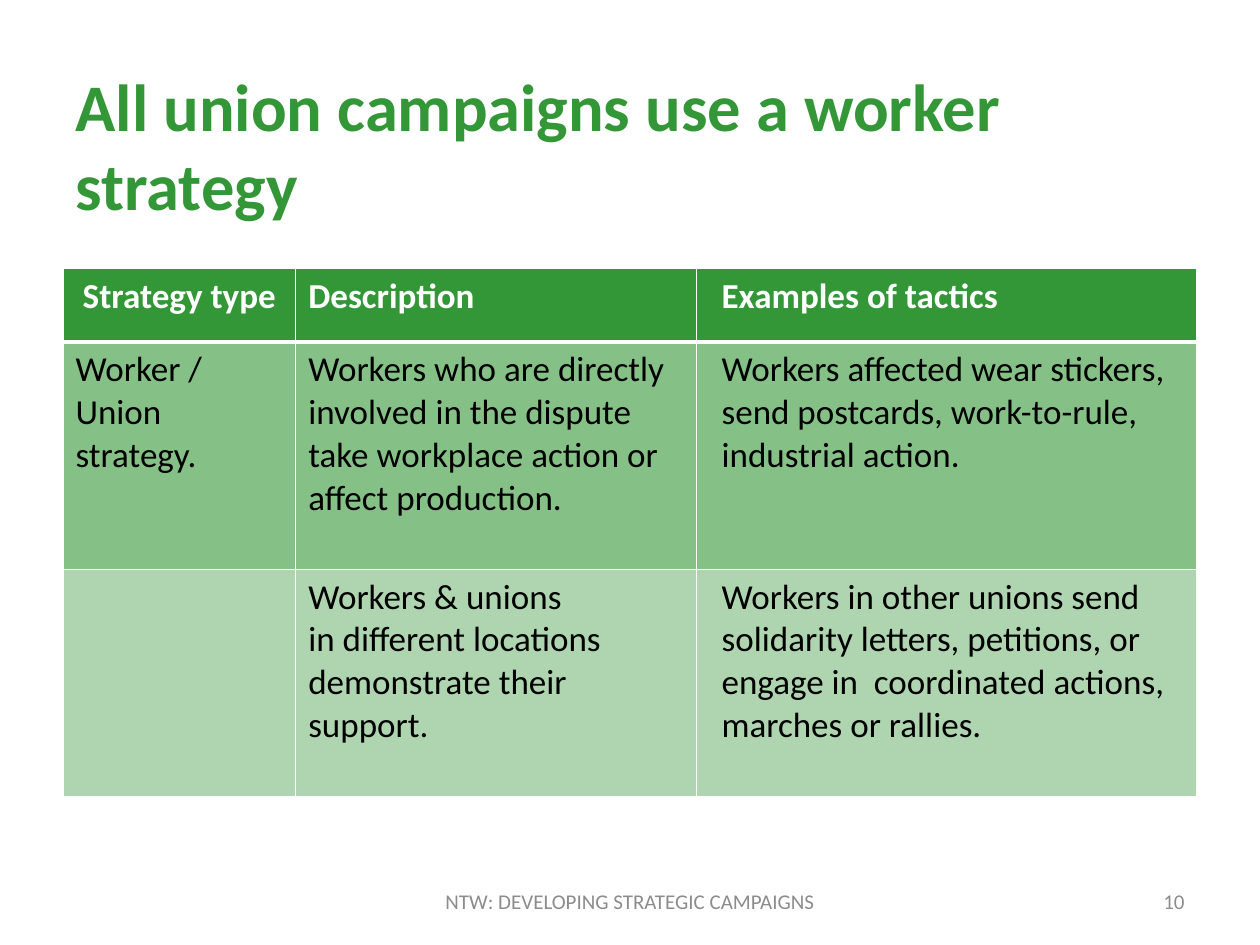
from lxml.etree import SubElement
from pptx import Presentation
from pptx.dml.color import RGBColor
from pptx.enum.text import MSO_ANCHOR as Anchor, MSO_AUTO_SIZE as AutoSize, PP_ALIGN as Align
from pptx.oxml.ns import qn
from pptx.util import Pt

GREEN, MID_GREEN, PALE_GREEN = "349737", "85C187", "AED5AF"
WHITE, BLACK, GREY = "FFFFFF", "000000", "8C8C8C"

COLUMN_WIDTHS = [133, 229, 286]
ROW_HEIGHTS = [42, 130, 130]
ROW_FILLS = [GREEN, MID_GREEN, PALE_GREEN]
TACTICS_INDENT = Pt(7.2)
STRATEGIES = [
    ["Strategy type", "Description", "Examples of tactics"],
    ["Worker / Union strategy.",
     "Workers who are directly involved in the dispute take workplace action or affect production.",
     "Workers affected wear stickers, send postcards, work-to-rule, industrial action."],
    ["",
     "Workers & unions \vin different locations demonstrate their support.",
     "Workers in other unions send solidarity letters, petitions, or engage in  coordinated actions, "
     "marches or rallies."],
]


def rgb(value):
    return RGBColor.from_string(value)


def set_all(target, formats):
    for name, value in formats.items():
        setattr(target, name, value)


def write(frame, text, size, color, bold=False, align=Align.LEFT):
    """Put one formatted paragraph in the frame and return it."""
    frame.text = text
    paragraph = frame.paragraphs[0]
    paragraph.alignment = align
    set_all(paragraph.font, {"name": "Calibri", "size": Pt(size), "bold": bold})
    paragraph.font.color.rgb = rgb(color)
    for run in paragraph.runs:
        set_all(run.font, {"name": "Calibri", "size": Pt(size), "bold": bold})
        run.font.color.rgb = rgb(color)
    return paragraph


def add_borders(cell, bottom_width):
    widths = {"lnL": 1, "lnR": 1, "lnT": 1, "lnB": bottom_width}
    for side, width in widths.items():
        line = SubElement(cell._tc.get_or_add_tcPr(), qn(f"a:{side}"), w=str(Pt(width)))
        SubElement(SubElement(line, qn("a:solidFill")), qn("a:srgbClr"), val=WHITE)


def place_title(slide, left, top, width, height):
    title = slide.shapes.title
    set_all(title, {"left": Pt(left), "top": Pt(top), "width": Pt(width), "height": Pt(height)})
    set_all(title.text_frame, {"word_wrap": True, "auto_size": AutoSize.NONE,
                               "vertical_anchor": Anchor.MIDDLE})
    write(title.text_frame, "All union campaigns use a worker strategy", 38, GREEN, bold=True)


def add_strategy_table(slide, left, top):
    table = slide.shapes.add_table(
        len(ROW_HEIGHTS), len(COLUMN_WIDTHS), Pt(left), Pt(top),
        Pt(sum(COLUMN_WIDTHS)), Pt(sum(ROW_HEIGHTS))).table
    for column, width in zip(table.columns, COLUMN_WIDTHS):
        column.width = Pt(width)
    for row_index, (row, height) in enumerate(zip(table.rows, ROW_HEIGHTS)):
        row.height = Pt(height)
        is_header = row_index == 0
        for column_index, cell in enumerate(row.cells):
            centred = is_header and column_index == 0
            paragraph = write(cell.text_frame, STRATEGIES[row_index][column_index], 20,
                              WHITE if is_header else BLACK, is_header,
                              Align.CENTER if centred else Align.LEFT)
            if column_index == 2:
                paragraph._p.get_or_add_pPr().set("marL", str(TACTICS_INDENT))
            # The lower edge of the header is shared with the row under it.
            add_borders(cell, 3 if is_header else 1)
            cell.fill.solid()
            cell.fill.fore_color.rgb = rgb(ROW_FILLS[row_index])


def add_footer(slide, left, top, width, height):
    """Centre the course name in the box and set the page number at its right end."""
    name_width, number_width = 228, 168
    parts = [
        ("NTW: DEVELOPING STRATEGIC CAMPAIGNS", (width - name_width) / 2, name_width, Align.CENTER),
        ("10", width - number_width, number_width, Align.RIGHT),
    ]
    for text, offset, part_width, align in parts:
        frame = slide.shapes.add_textbox(
            Pt(left + offset), Pt(top), Pt(part_width), Pt(height)).text_frame
        set_all(frame, {"word_wrap": True, "vertical_anchor": Anchor.MIDDLE})
        write(frame, text, 12, GREY, align=align)


def main():
    deck = Presentation()
    set_all(deck, {"slide_width": Pt(720), "slide_height": Pt(540)})
    slide = deck.slides.add_slide(deck.slide_layouts.get_by_name("Title Only"))
    margin, content_width = 36, 648
    add_footer(slide, margin, 500.5, content_width, 28.8)
    add_strategy_table(slide, margin, 153.4)
    place_title(slide, margin, 37.5, content_width, 90)
    deck.save("out.pptx")


if __name__ == "__main__":
    main()
